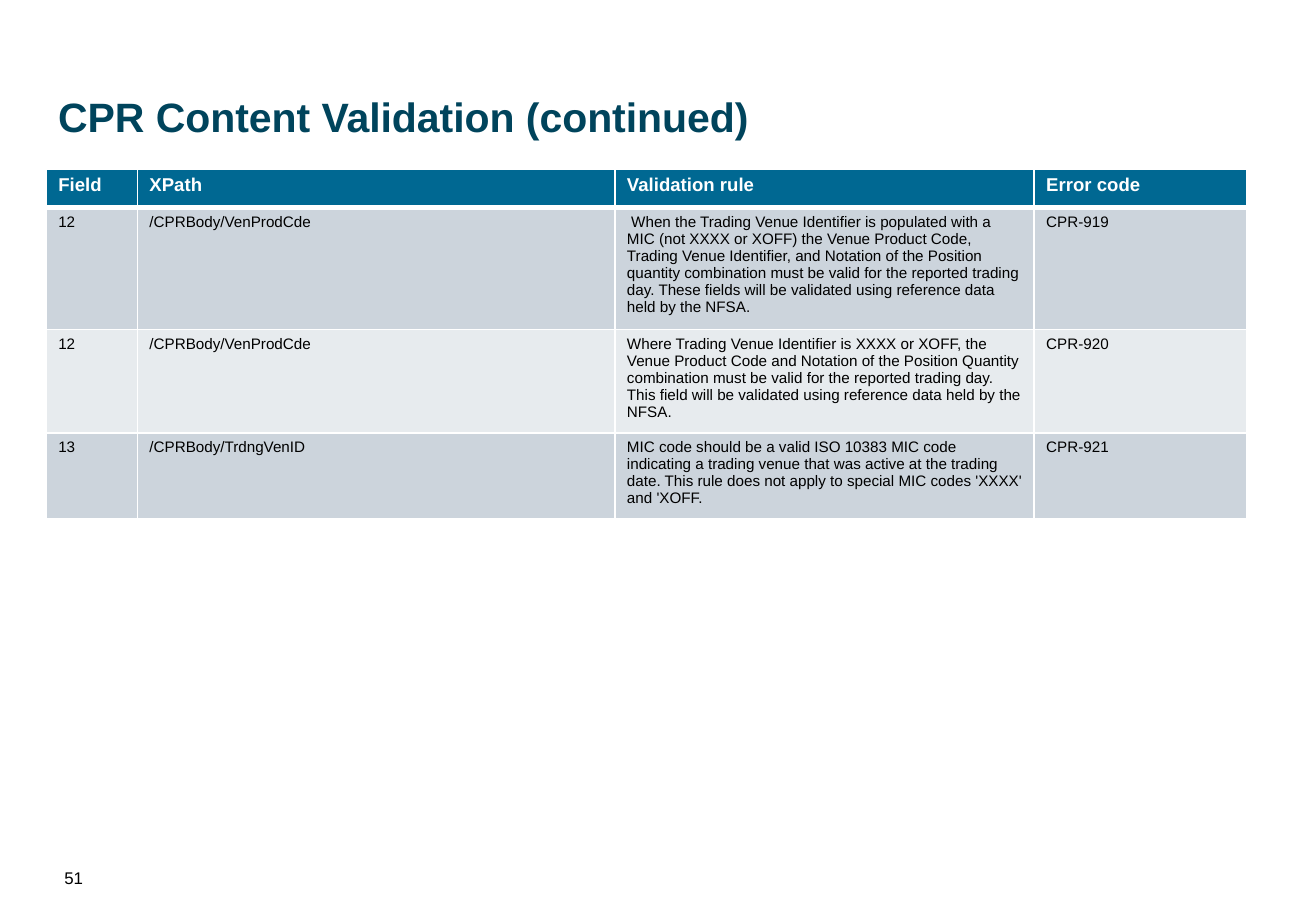
from dataclasses import dataclass

from lxml import etree
from pptx import Presentation
from pptx.dml.color import RGBColor
from pptx.enum.text import MSO_ANCHOR
from pptx.oxml.ns import qn
from pptx.util import Inches, Pt

TOP = MSO_ANCHOR.TOP


@dataclass(frozen=True)
class Theme:
    font: str = "Arial"
    title: str = "00445C"
    header: str = "006892"
    bands: tuple = ("CCD4DC", "E7EBEE")
    white: str = "FFFFFF"
    black: str = "000000"
    title_size: float = 24.3
    header_size: float = 11
    body_size: float = 9
    number_size: float = 10
    rule: float = 1
    header_rule: float = 3


THEME = Theme()

COLUMN_WIDTHS = (0.75, 3.93, 3.45, 1.75)
ROW_HEIGHTS = (0.32, 0.94, 0.8, 0.66)
ROWS = (
    ("Field", "XPath", "Validation rule", "Error code"),
    ("12", "/CPRBody/VenProdCde",
     " When the Trading Venue Identifier is populated with a MIC (not XXXX or XOFF) "
     "the Venue Product Code, Trading Venue Identifier, and Notation of the Position "
     "quantity combination must be valid for the reported trading day. These fields "
     "will be validated using reference data held by the NFSA.",
     "CPR-919"),
    ("12", "/CPRBody/VenProdCde",
     "Where Trading Venue Identifier is XXXX or XOFF, the Venue Product Code and "
     "Notation of the Position Quantity combination must be valid for the reported "
     "trading day. This field will be validated using reference data held by the NFSA.",
     "CPR-920"),
    ("13", "/CPRBody/TrdngVenID",
     "MIC code should be a valid ISO 10383 MIC code indicating a trading venue that "
     "was active at the trading date. This rule does not apply to special MIC codes "
     "'XXXX' and 'XOFF.",
     "CPR-921"),
)


def write_text(frame, text, size, color, bold=False):
    frame.text = text
    font = frame.paragraphs[0].font
    font.name = THEME.font
    font.size = Pt(size)
    font.bold = bold
    font.color.rgb = RGBColor.from_string(color)


def add_text(page, left, top, width, height, text, size, color,
             bold=False, side_inset=0, top_inset=0):
    box = page.shapes.add_textbox(Inches(left), Inches(top), Inches(width), Inches(height))
    frame = box.text_frame
    frame.word_wrap = True
    frame.vertical_anchor = TOP
    frame.margin_left = frame.margin_right = Inches(side_inset)
    frame.margin_top = Inches(top_inset)
    frame.margin_bottom = 0
    write_text(frame, text, size, color, bold)


def set_borders(cell, top, bottom):
    widths = {"a:lnL": THEME.rule, "a:lnR": THEME.rule, "a:lnT": top, "a:lnB": bottom}
    properties = cell._tc.get_or_add_tcPr()
    for tag, width in widths.items():
        line = etree.SubElement(properties, qn(tag), w=str(Pt(width)))
        fill = etree.SubElement(line, qn("a:solidFill"))
        etree.SubElement(fill, qn("a:srgbClr"), val=THEME.white)


def style_cell(cell, text, row):
    # The thick rule lies between the header and the first body row
    set_borders(cell,
                top=THEME.header_rule if row == 1 else THEME.rule,
                bottom=THEME.header_rule if row == 0 else THEME.rule)
    color = THEME.bands[(row - 1) % 2] if row else THEME.header
    cell.fill.solid()
    cell.fill.fore_color.rgb = RGBColor.from_string(color)
    if row:
        write_text(cell.text_frame, text, THEME.body_size, THEME.black)
    else:
        write_text(cell.text_frame, text, THEME.header_size, THEME.white, bold=True)


def add_rules_table(page, left, top):
    table = page.shapes.add_table(
        len(ROWS), len(COLUMN_WIDTHS), Inches(left), Inches(top),
        Inches(sum(COLUMN_WIDTHS)), Inches(sum(ROW_HEIGHTS))).table
    for column, width in zip(table.columns, COLUMN_WIDTHS):
        column.width = Inches(width)
    for row, (height, texts) in enumerate(zip(ROW_HEIGHTS, ROWS)):
        table.rows[row].height = Inches(height)
        for column, text in enumerate(texts):
            style_cell(table.cell(row, column), text, row)


def main():
    deck = Presentation()
    deck.slide_width, deck.slide_height = Inches(10.83), Inches(7.5)
    page = deck.slides.add_slide(deck.slide_layouts[6])

    # Title
    add_text(page, 0.38, 0.68, 9.54, 0.63, "CPR Content Validation (continued)",
             THEME.title_size, THEME.title, bold=True, side_inset=0.1, top_inset=0.07)

    # Validation rules
    add_rules_table(page, 0.38, 1.39)

    # Page number
    add_text(page, 0.53, 7.14, 0.79, 0.17, "51", THEME.number_size, THEME.black)

    deck.save("out.pptx")


if __name__ == "__main__":
    main()
